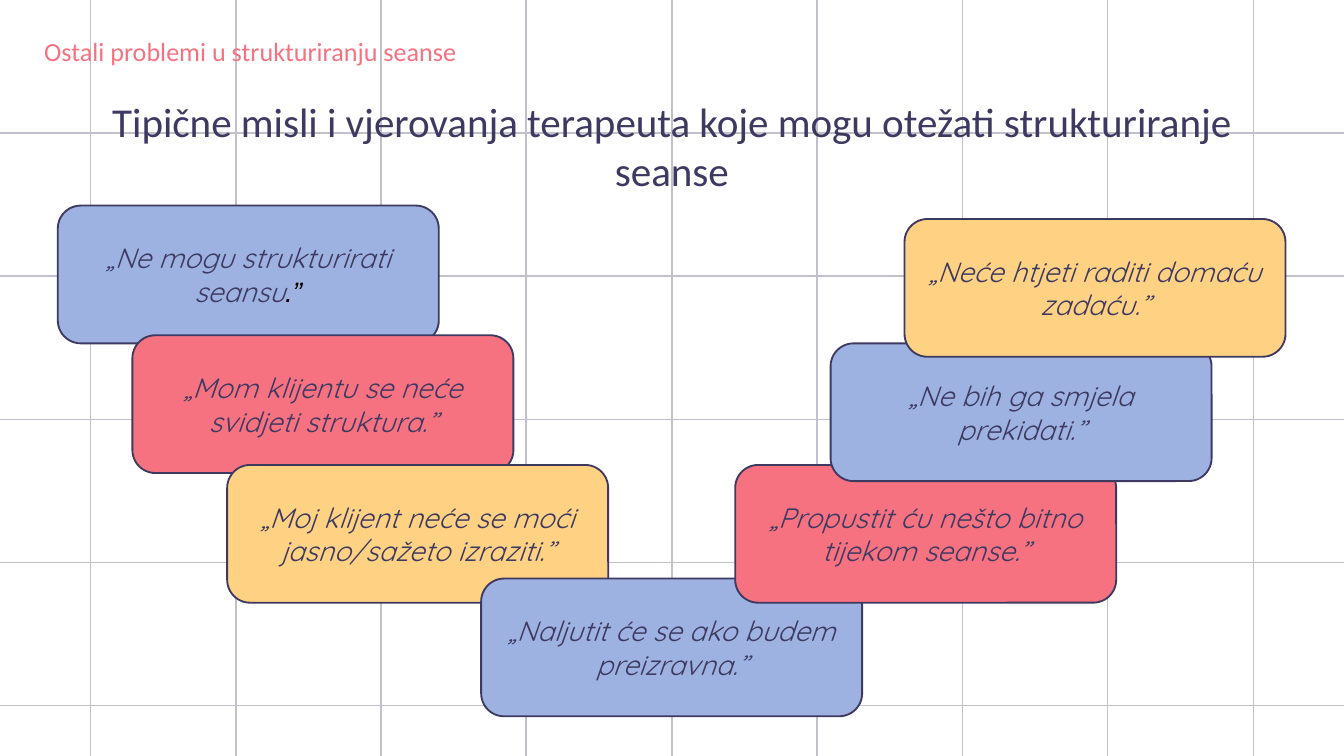
from dataclasses import dataclass

from lxml import etree
from pptx import Presentation
from pptx import util as u
from pptx.dml.color import RGBColor
from pptx.enum import shapes, text
from pptx.oxml import ns

EMU_PER_PX = 4572
PAGE_WIDTH, PAGE_HEIGHT = 2000, 1125
CARD_WIDTH, CARD_HEIGHT = 567, 205
COLORS = {
    "ink": "3D3961",
    "grid": "C2C1CB",
    "blue": "9DB2E0",
    "coral": "F67280",
    "yellow": "FFD283",
    "black": "000000",
}


@dataclass
class Card:
    left: int
    top: int
    fill: str
    quote: str
    ending: str = ""


CARDS = [
    Card(86, 306, "blue", "„Ne mogu strukturirati seansu", ".”"),
    Card(197, 499, "coral", "„Mom klijentu se neće svidjeti struktura.”"),
    Card(338, 692, "yellow", "„Moj klijent neće se moći jasno/sažeto izraziti.”"),
    Card(716, 861, "blue", "„Naljutit će se ako budem preizravna.”"),
    Card(1094, 692, "coral", "„Propustit ću nešto bitno tijekom seanse.”"),
    Card(1236, 511, "blue", "„Ne bih ga smjela prekidati.”"),
    Card(1346, 326, "yellow", "„Neće htjeti raditi domaću zadaću.”"),
]


def px(length: int) -> u.Emu:
    return u.Emu(length * EMU_PER_PX)


def color(name: str) -> RGBColor:
    return RGBColor.from_string(COLORS[name])


def format_span(span, size: int, font: str, ink: str, italic: bool = False) -> None:
    span.font.size = u.Pt(size)
    span.font.name = font
    span.font.color.rgb = color(ink)
    span.font.italic = italic


def set_margins(frame, margin: int) -> None:
    frame.margin_left = frame.margin_right = px(margin)
    frame.margin_top = frame.margin_bottom = px(margin)


def draw_grid_line(page, x1: int, y1: int, x2: int, y2: int) -> None:
    line = page.shapes.add_connector(
        shapes.MSO_CONNECTOR.STRAIGHT, px(x1), px(y1), px(x2), px(y2)
    )
    line.line.color.rgb = color("grid")
    line.line.width = u.Pt(0.75)
    etree.SubElement(line.element.spPr, ns.qn("a:effectLst"))


def draw_grid(page) -> None:
    for column in range(9):
        x = 135 + 865 * column // 4
        draw_grid_line(page, x, -40, x, 1154)
    for row in range(5):
        y = 198 + 213 * row
        draw_grid_line(page, -36, y, 2036, y)


def place_title(page) -> None:
    title = page.shapes.title
    title.element.getparent().append(title.element)
    title.left, title.top, title.width, title.height = px(157), px(154), px(1686), px(126)
    frame = title.text_frame
    frame.text = "Tipične misli i vjerovanja terapeuta koje mogu otežati strukturiranje seanse"
    frame.auto_size = text.MSO_AUTO_SIZE.NONE
    frame.vertical_anchor = text.MSO_ANCHOR.MIDDLE
    set_margins(frame, 0)
    para = frame.paragraphs[0]
    para.alignment = text.PP_ALIGN.CENTER
    format_span(para.runs[0], 22, "Calibri", "ink")


def draw_topic(page) -> None:
    box = page.shapes.add_textbox(px(46), px(43), px(680), px(67))
    frame = box.text_frame
    frame.text = "Ostali problemi u strukturiranju seanse"
    frame.word_wrap = False
    frame.auto_size = text.MSO_AUTO_SIZE.SHAPE_TO_FIT_TEXT
    format_span(frame.paragraphs[0].runs[0], 14, "Calibri", "coral")


def draw_card(page, card: Card) -> None:
    box = page.shapes.add_shape(
        shapes.MSO_SHAPE.ROUNDED_RECTANGLE,
        px(card.left), px(card.top), px(CARD_WIDTH), px(CARD_HEIGHT),
    )
    box.shadow.inherit = False
    box.fill.solid()
    box.fill.fore_color.rgb = color(card.fill)
    box.line.color.rgb = color("ink")
    box.line.width = u.Pt(1)
    frame = box.text_frame
    frame.text = card.quote
    frame.word_wrap = True
    frame.vertical_anchor = text.MSO_ANCHOR.MIDDLE
    set_margins(frame, 20)
    para = frame.paragraphs[0]
    para.alignment = text.PP_ALIGN.CENTER
    format_span(para.runs[0], 15, "Quicksand", "ink", italic=True)
    if card.ending:
        span = para.add_run()
        span.text = card.ending
        format_span(span, 15, "Arial", "black", italic=True)


def main() -> None:
    deck = Presentation()
    deck.slide_width, deck.slide_height = px(PAGE_WIDTH), px(PAGE_HEIGHT)
    page = deck.slides.add_slide(deck.slide_layouts.get_by_name("Title Only"))
    draw_grid(page)
    place_title(page)
    draw_topic(page)
    for card in CARDS:
        draw_card(page, card)
    deck.save("out.pptx")


if __name__ == "__main__":
    main()
